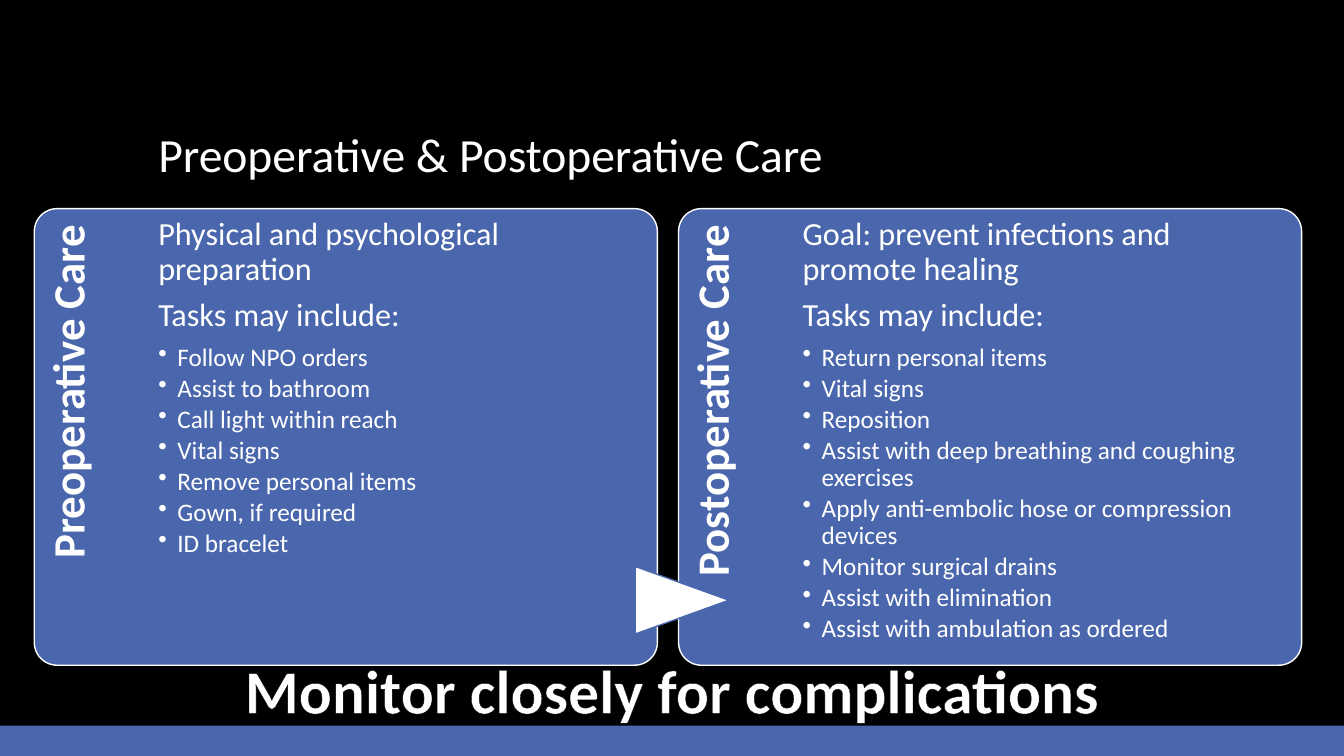
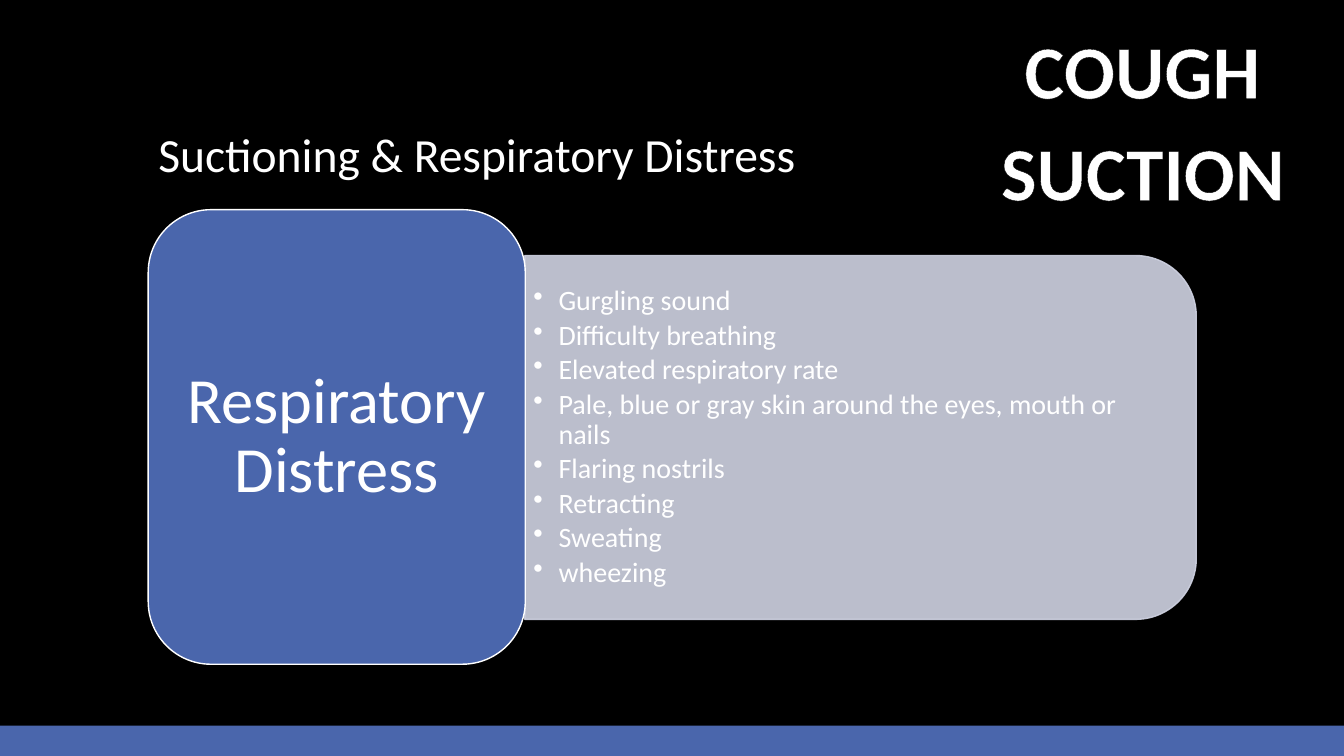
from dataclasses import dataclass
from typing import NamedTuple, Optional

import lxml.etree
import pptx
import pptx.dml.color
import pptx.enum.shapes
import pptx.enum.text
import pptx.oxml.ns
import pptx.util

EMU_PER_PX = 9144
SHAPE = pptx.enum.shapes.MSO_SHAPE
ALIGN = pptx.enum.text.PP_ALIGN
ANCHOR = pptx.enum.text.MSO_ANCHOR
FIT = pptx.enum.text.MSO_AUTO_SIZE
qn = pptx.oxml.ns.qn


@dataclass(frozen=True)
class Theme:
    background: str = "000000"
    accent: str = "4A66AC"
    panel: str = "D0D3E3"
    text: str = "FFFFFF"
    font: str = "Calibri"
    title: int = 34
    label: int = 32
    intro: int = 23
    task: int = 18
    symptom: int = 20
    topic: int = 46
    reminder: int = 44
    callout: int = 54
    outline_pt: float = 1.06
    panel_opacity: int = 90


THEME = Theme()


class Box(NamedTuple):
    left: int
    top: int
    width: int
    height: int


class Insets(NamedTuple):
    left: int = 10
    top: int = 5
    right: int = 10
    bottom: int = 5


@dataclass(frozen=True)
class TextStyle:
    size: int
    bold: bool = False
    align: ALIGN = ALIGN.LEFT
    line_spacing: float = 0.9
    after: float = 0.35
    bullet_indent: int = 0
    outlined: bool = False


TITLE = TextStyle(THEME.title, after=0)
LABEL = TextStyle(THEME.label, bold=True, align=ALIGN.RIGHT)
INTRO = TextStyle(THEME.intro)
TASK = TextStyle(THEME.task, after=0.15, bullet_indent=19)
SYMPTOM = TextStyle(THEME.symptom, after=0.15, bullet_indent=25)
TOPIC = TextStyle(THEME.topic, align=ALIGN.CENTER)


@dataclass(frozen=True)
class CareCard:
    label: str
    intro: tuple[str, ...]
    tasks: tuple[str, ...]


@dataclass(frozen=True)
class Banner:
    text: str
    box: Box
    size: int


SLIDE_SIZE = (1333, 750)
TITLE_BOX = Box(147, 51, 1040, 135)
BAND = Box(0, 720, 1333, 30)
FIRST_CARD = Box(34, 207, 618, 453)
CARD_STEP = 639

CARE_CARDS = (
    CareCard(
        "Preoperative Care",
        ("Physical and psychological preparation", "Tasks may include:"),
        (
            "Follow NPO orders",
            "Assist to bathroom",
            "Call light within reach",
            "Vital signs",
            "Remove personal items",
            "Gown, if required",
            "ID bracelet",
        ),
    ),
    CareCard(
        "Postoperative Care",
        ("Goal: prevent infections and promote healing", "Tasks may include:"),
        (
            "Return personal items",
            "Vital signs",
            "Reposition",
            "Assist with deep breathing and coughing exercises",
            "Apply anti-embolic hose or compression devices",
            "Monitor surgical drains",
            "Assist with elimination",
            "Assist with ambulation as ordered",
        ),
    ),
)
SYMPTOMS = (
    "Gurgling sound",
    "Difficulty breathing",
    "Elevated respiratory rate",
    "Pale, blue or gray skin around the eyes, mouth or nails",
    "Flaring nostrils",
    "Retracting",
    "Sweating",
    "wheezing",
)
REMINDER = Banner("Monitor closely for complications", Box(229, 642, 876, 84), THEME.reminder)
CALLOUTS = (
    Banner("COUGH", Box(1005, 18, 256, 101), THEME.callout),
    Banner("SUCTION", Box(981, 119, 305, 101), THEME.callout),
)


def px(length: int) -> pptx.util.Emu:
    return pptx.util.Emu(length * EMU_PER_PX)


def rgb(value: str) -> pptx.dml.color.RGBColor:
    return pptx.dml.color.RGBColor.from_string(value)


def style_paragraph(paragraph, style: TextStyle) -> None:
    paragraph.alignment = style.align
    paragraph.line_spacing = style.line_spacing
    paragraph.space_before = pptx.util.Pt(0)
    paragraph.space_after = pptx.util.Pt(style.size * style.after)
    if style.bullet_indent:
        paragraph.level = 1
        properties = paragraph._p.get_or_add_pPr()
        properties.set("marL", str(px(style.bullet_indent)))
        properties.set("indent", str(-px(style.bullet_indent)))
        lxml.etree.SubElement(properties, qn("a:buChar")).set("char", "•")
    for run in paragraph.runs:
        run.font.name = THEME.font
        run.font.size = pptx.util.Pt(style.size)
        run.font.bold = style.bold
        run.font.color.rgb = rgb(THEME.text)
        if style.outlined:
            outline = lxml.etree.Element(qn("a:ln"), w=str(int(pptx.util.Pt(THEME.outline_pt))))
            fill = lxml.etree.SubElement(outline, qn("a:solidFill"))
            lxml.etree.SubElement(fill, qn("a:srgbClr")).set("val", THEME.background)
            run.font._element.insert(0, outline)


def write(
    frame,
    lines: list[tuple[str, TextStyle]],
    insets: Insets = Insets(),
    anchor: ANCHOR = ANCHOR.TOP,
    wrap: bool = True,
) -> None:
    frame.text = "\n".join(text for text, _ in lines)
    frame.word_wrap = wrap
    frame.auto_size = FIT.NONE if wrap else FIT.SHAPE_TO_FIT_TEXT
    frame.vertical_anchor = anchor
    frame.margin_left, frame.margin_top, frame.margin_right, frame.margin_bottom = map(px, insets)
    for paragraph, (_, style) in zip(frame.paragraphs, lines):
        style_paragraph(paragraph, style)


def add_text(slide, box: Box, lines: list[tuple[str, TextStyle]], rotation: int = 0, **layout) -> None:
    textbox = slide.shapes.add_textbox(*map(px, box))
    textbox.rotation = rotation
    write(textbox.text_frame, lines, **layout)


def add_shape(
    slide, kind: SHAPE, box: Box, fill: str, line: Optional[str] = None, rotation: int = 0
):
    shape = slide.shapes.add_shape(kind, *map(px, box))
    shape.shadow.inherit = False
    shape.rotation = rotation
    shape.fill.solid()
    shape.fill.fore_color.rgb = rgb(fill)
    if line:
        shape.line.color.rgb = rgb(line)
        shape.line.width = pptx.util.Pt(1)
    else:
        shape.line.fill.background()
    return shape


def set_opacity(shape, percent: int) -> None:
    for color in shape.element.spPr.iter(qn("a:srgbClr")):
        lxml.etree.SubElement(color, qn("a:alpha")).set("val", str(percent * 1000))


def add_titled_slide(presentation, title: str):
    slide = presentation.slides.add_slide(presentation.slide_layouts.get_by_name("Title Only"))
    heading = slide.shapes.title
    heading.left, heading.top, heading.width, heading.height = map(px, TITLE_BOX)
    write(heading.text_frame, [(title, TITLE)], anchor=ANCHOR.BOTTOM)
    return slide


def move_to_master(presentation, band) -> None:
    band.element.xpath("./p:nvSpPr/p:cNvPr")[0].set("id", "100")
    presentation.slide_master.shapes.element.insert(2, band.element)


def add_banner(slide, banner: Banner) -> None:
    style = TextStyle(
        banner.size, bold=True, align=ALIGN.CENTER, line_spacing=1.0, after=0, outlined=True
    )
    add_text(slide, banner.box, [(banner.text, style)], wrap=False)


def add_care_card(slide, card: CareCard, box: Box) -> None:
    background = add_shape(slide, SHAPE.ROUNDED_RECTANGLE, box, THEME.accent, THEME.text)
    background.adjustments[0] = 0.05
    label_box = Box(box.left - 124, box.top + 124, 371, 124)
    add_text(slide, label_box, [(card.label, LABEL)], rotation=270, insets=Insets(0, 12, 16, 0))
    lines = [(text, INTRO) for text in card.intro] + [(text, TASK) for text in card.tasks]
    body_box = Box(box.left + 123, box.top, 460, box.height)
    add_text(slide, body_box, lines, insets=Insets(0, 9, 0, 0))


def build_care_slide(presentation) -> None:
    slide = add_titled_slide(presentation, "Preoperative & Postoperative Care")
    move_to_master(presentation, add_shape(slide, SHAPE.RECTANGLE, BAND, THEME.accent))
    for index, card in enumerate(CARE_CARDS):
        left = FIRST_CARD.left + index * CARD_STEP
        add_care_card(slide, card, FIRST_CARD._replace(left=left))
    add_shape(
        slide, SHAPE.FLOWCHART_EXTRACT, Box(643, 549, 67, 93), THEME.text, THEME.accent, rotation=90
    )
    add_banner(slide, REMINDER)


def build_distress_slide(presentation) -> None:
    slide = add_titled_slide(presentation, "Suctioning & Respiratory Distress")
    symptom_panel = add_shape(
        slide, SHAPE.ROUND_2_SAME_RECTANGLE, Box(673, 101, 361, 666), THEME.panel, THEME.panel, 90
    )
    set_opacity(symptom_panel, THEME.panel_opacity)
    add_text(
        slide,
        Box(521, 271, 648, 326),
        [(symptom, SYMPTOM) for symptom in SYMPTOMS],
        insets=Insets(8, 4, 8, 4),
        anchor=ANCHOR.MIDDLE,
    )
    topic = add_shape(
        slide, SHAPE.ROUNDED_RECTANGLE, Box(147, 208, 374, 451), THEME.accent, THEME.text
    )
    write(
        topic.text_frame,
        [("Respiratory Distress", TOPIC)],
        insets=Insets(19, 10, 19, 10),
        anchor=ANCHOR.MIDDLE,
    )
    for callout in CALLOUTS:
        add_banner(slide, callout)


def main() -> None:
    presentation = pptx.Presentation()
    presentation.slide_width, presentation.slide_height = map(px, SLIDE_SIZE)
    master_fill = presentation.slide_master.background.fill
    master_fill.solid()
    master_fill.fore_color.rgb = rgb(THEME.background)
    build_care_slide(presentation)
    build_distress_slide(presentation)
    presentation.save("out.pptx")


if __name__ == "__main__":
    main()
